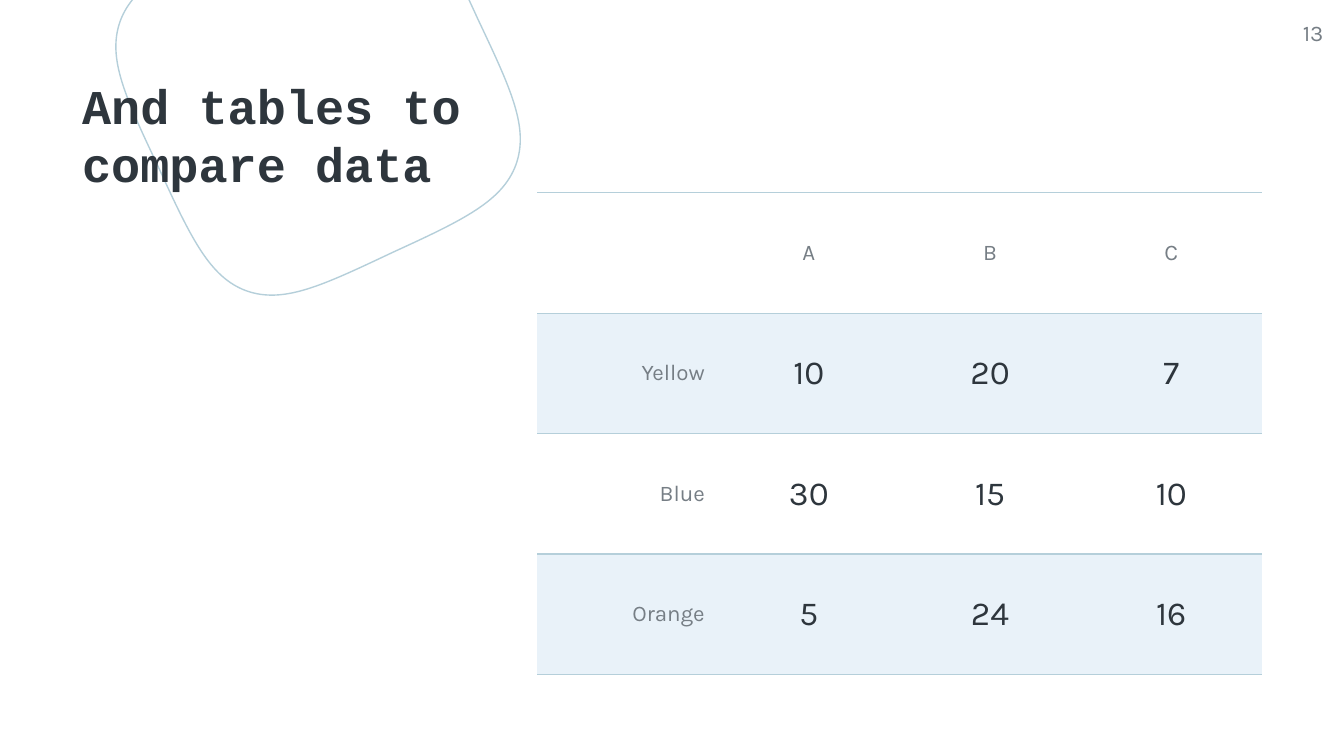
from dataclasses import dataclass

from lxml.etree import SubElement
from pptx import Presentation
from pptx.dml.color import RGBColor
from pptx.enum.text import MSO_ANCHOR as Anchor, MSO_AUTO_SIZE as AutoSize, PP_ALIGN as Align
from pptx.oxml.ns import qn
from pptx.shapes.autoshape import Shape
from pptx.slide import Slide
from pptx.table import _Cell as Cell
from pptx.text.text import TextFrame
from pptx.util import Pt


@dataclass(frozen=True)
class TextStyle:
    font: str
    size: float
    color: str
    bold: bool = False


@dataclass(frozen=True)
class Theme:
    line: str = "B5CFDA"
    band: str = "E9F2F9"
    line_width: float = 0.75
    title: TextStyle = TextStyle("Courier New", 26, "2E363D", True)
    label: TextStyle = TextStyle("Karla", 12, "767E85")
    value: TextStyle = TextStyle("Karla", 18, "2E363D")


@dataclass(frozen=True)
class Box:
    left: float
    top: float
    width: float
    height: float

    def lengths(self) -> tuple:
        return Pt(self.left), Pt(self.top), Pt(self.width), Pt(self.height)


Point = tuple[float, float]

THEME = Theme()
SLIDE_SIZE = (720, 405)
TITLE_BOX = Box(44, 40.6, 222.5, 36)
NUMBER_BOX = Box(666, 10, 43, 31)
TABLE_BOX = Box(287.7, 103.2, 388.4, 258.2)
ROWS = [
    ("", "A", "B", "C"),
    ("Yellow", "10", "20", "7"),
    ("Blue", "30", "15", "10"),
    ("Orange", "5", "24", "16"),
]
BLOB_CENTER = (170.4, 49.8)
BLOB_RADIUS = 108.3
BLOB_START = (40, 85.4)
BLOB_QUARTER = [
    [(78, 68), (98.8, 58), (106, 38.5)],
    [(113.2, 18.4), (103.1, -2.5), (85.4, -40)],
]


def write(frame: TextFrame, text: str, style: TextStyle, align: Align) -> None:
    frame.text = text
    paragraph = frame.paragraphs[0]
    paragraph.alignment = align
    font = paragraph.font
    font.name, font.size, font.bold = style.font, Pt(style.size), style.bold
    font.color.rgb = RGBColor.from_string(style.color)


def prepare(frame: TextFrame) -> None:
    frame.margin_left = frame.margin_top = frame.margin_right = frame.margin_bottom = 0
    frame.word_wrap = True
    frame.auto_size = AutoSize.NONE
    frame.vertical_anchor = Anchor.TOP


def add_path_step(path, kind: str, points: list[Point]) -> None:
    step = SubElement(path, qn(f"a:{kind}"))
    for x, y in points:
        SubElement(step, qn("a:pt"), x=str(Pt(BLOB_RADIUS + x)), y=str(Pt(BLOB_RADIUS + y)))


def curve_outline(shape: Shape) -> None:
    path = next(shape._element.iter(qn("a:path")))
    for step in list(path):
        path.remove(step)
    add_path_step(path, "moveTo", [BLOB_START])
    quarter = BLOB_QUARTER
    for _ in range(4):
        for curve in quarter:
            add_path_step(path, "cubicBezTo", curve)
        quarter = [[(y, -x) for x, y in curve] for curve in quarter]
    SubElement(path, qn("a:close"))


def add_blob(slide: Slide) -> None:
    left, right = (Pt(BLOB_CENTER[0] + side * BLOB_RADIUS) for side in (-1, 1))
    top, bottom = (Pt(BLOB_CENTER[1] + side * BLOB_RADIUS) for side in (-1, 1))
    builder = slide.shapes.build_freeform(left, top)
    builder.add_line_segments([(right, top), (right, bottom), (left, bottom)], close=True)
    shape = builder.convert_to_shape()
    curve_outline(shape)
    shape.shadow.inherit = False
    shape.fill.background()
    shape.line.color.rgb = RGBColor.from_string(THEME.line)
    shape.line.width = Pt(THEME.line_width)
    slide.shapes._spTree.insert(2, shape._element)


def add_title(slide: Slide) -> None:
    title = slide.shapes.title
    title.left, title.top, title.width, title.height = TITLE_BOX.lengths()
    prepare(title.text_frame)
    write(title.text_frame, "And tables to compare data", THEME.title, Align.LEFT)


def add_number(slide: Slide) -> None:
    frame = slide.shapes.add_textbox(*NUMBER_BOX.lengths()).text_frame
    prepare(frame)
    write(frame, "13", THEME.label, Align.RIGHT)


def set_borders(cell: Cell) -> None:
    properties = cell._tc.get_or_add_tcPr()
    for position, side in enumerate(("lnL", "lnR", "lnT", "lnB")):
        border = SubElement(properties, qn(f"a:{side}"), w=str(Pt(THEME.line_width)))
        properties.insert(position, border)
        if side in ("lnT", "lnB"):
            fill = SubElement(border, qn("a:solidFill"))
            SubElement(fill, qn("a:srgbClr"), val=THEME.line)
        else:
            SubElement(border, qn("a:noFill"))


def format_cell(cell: Cell, text: str, row: int, column: int) -> None:
    style = THEME.value if row and column else THEME.label
    write(cell.text_frame, text, style, Align.CENTER if column else Align.RIGHT)
    cell.vertical_anchor = Anchor.MIDDLE
    cell.margin_left = cell.margin_right = Pt(7.2)
    cell.margin_top = cell.margin_bottom = Pt(5)
    if row % 2:
        cell.fill.solid()
        cell.fill.fore_color.rgb = RGBColor.from_string(THEME.band)
    else:
        cell.fill.background()
    set_borders(cell)


def add_data_table(slide: Slide) -> None:
    table = slide.shapes.add_table(len(ROWS), len(ROWS[0]), *TABLE_BOX.lengths()).table
    table.first_row = table.horz_banding = False
    for row, texts in enumerate(ROWS):
        for column, text in enumerate(texts):
            format_cell(table.cell(row, column), text, row, column)


def main() -> None:
    presentation = Presentation()
    presentation.slide_width, presentation.slide_height = map(Pt, SLIDE_SIZE)
    slide = presentation.slides.add_slide(presentation.slide_layouts[5])
    add_blob(slide)
    add_title(slide)
    add_number(slide)
    add_data_table(slide)
    presentation.save("out.pptx")


if __name__ == "__main__":
    main()
